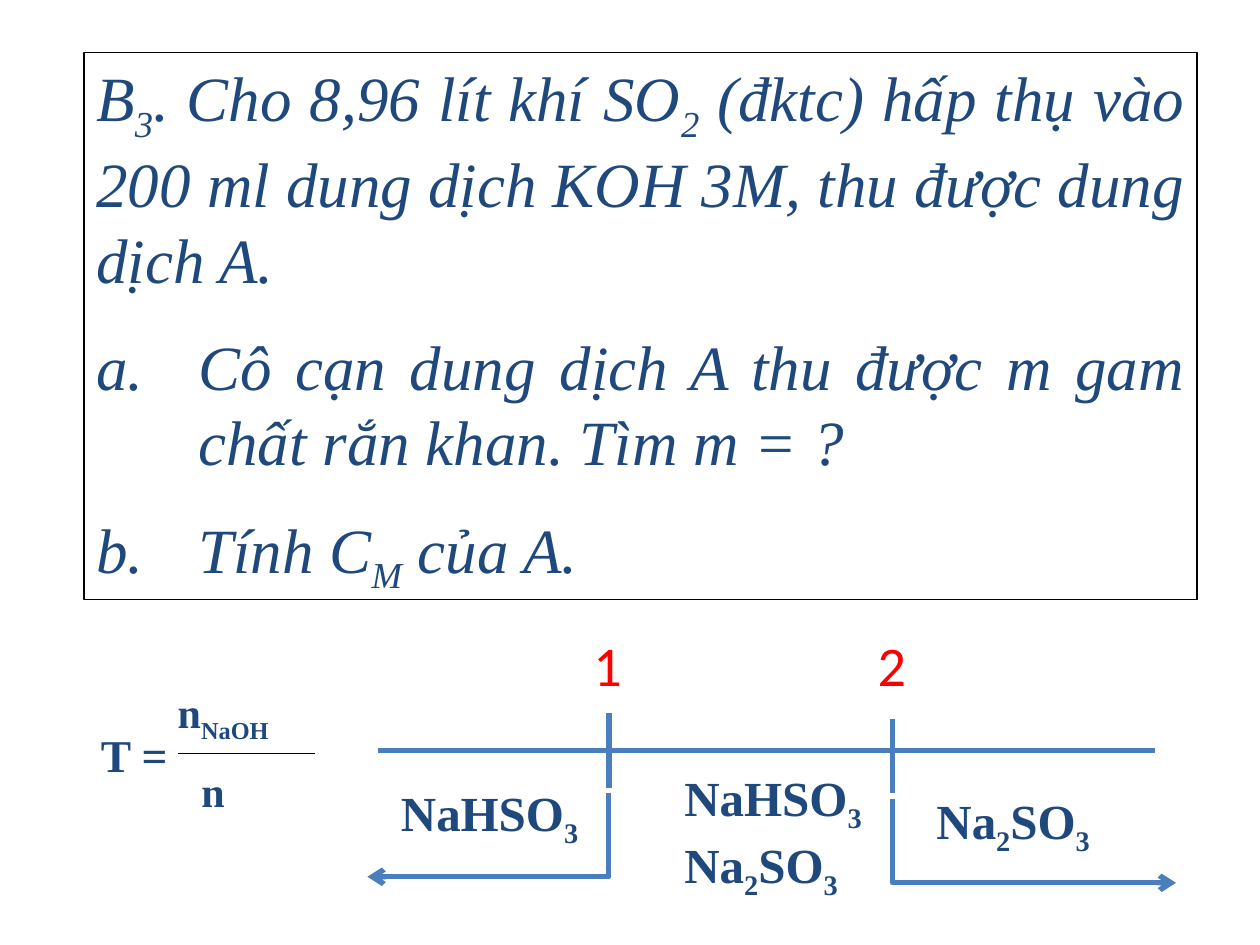
"""Build a chemistry exercise slide with a product scale for the ratio T."""
from dataclasses import dataclass

from lxml.etree import SubElement
from pptx import Presentation
from pptx.dml.color import RGBColor as Rgb
from pptx.enum.shapes import MSO_CONNECTOR as Link, MSO_SHAPE as Form
from pptx.enum.text import MSO_ANCHOR as Anchor, MSO_AUTO_SIZE as Fit, PP_ALIGN as Align
from pptx.oxml.ns import qn
from pptx.util import Pt

HUES = {"ink": "1F497D", "mark": "FF0000", "axis": "4B7EBC", "edge": "000000"}
SERIF = "Times New Roman"
HANG = 58.3
AXIS_Y = 429


@dataclass
class Label:
    """A text box whose subscripts stand between underscores."""
    x: float
    y: float
    w: float
    h: float
    lines: list[str]
    size: float = 28
    font: str = SERIF
    hue: str = "ink"
    bold: bool = True
    slant: bool = False
    wrap: bool = True
    gap: float = 0
    pads: tuple[float, ...] = ()


@dataclass
class Stroke:
    """A straight or bent line."""
    x1: float
    y1: float
    x2: float
    y2: float
    hue: str = "axis"
    width: float = 3
    bent: bool = False


def write(frame, item: Label) -> None:
    """Fill a text frame and format its runs."""
    frame.word_wrap = item.wrap
    frame.text = "\n".join(item.lines)
    for para in frame.paragraphs:
        parts = para.text.split("_")
        para.text = parts[0]
        for part in parts[1:]:
            para.add_run().text = part
        para.space_before = Pt(item.gap)
        for i, run in enumerate(para.runs):
            font = run.font
            font.name, font.size = item.font, Pt(item.size)
            font.bold, font.italic = item.bold, item.slant
            font.color.rgb = Rgb.from_string(HUES[item.hue])
            if i % 2:
                font._element.set("baseline", "-25000")
    for para, pad in zip(frame.paragraphs, item.pads):
        para._p.get_or_add_pPr().set("marL", str(Pt(pad)))


def draw_label(shapes, item: Label) -> None:
    """Add a text box."""
    box = shapes.add_textbox(Pt(item.x), Pt(item.y), Pt(item.w), Pt(item.h))
    write(box.text_frame, item)
    box.text_frame.auto_size = Fit.SHAPE_TO_FIT_TEXT


def draw_task(shapes, item: Label) -> None:
    """Add the framed exercise with lettered questions."""
    box = shapes.add_shape(
        Form.RECTANGLE, Pt(item.x), Pt(item.y), Pt(item.w), Pt(item.h))
    box.shadow.inherit = False
    box.fill.background()
    box.line.color.rgb = Rgb.from_string(HUES["edge"])
    box.line.width = Pt(0.75)
    frame = box.text_frame
    write(frame, item)
    frame.vertical_anchor = Anchor.TOP
    frame.auto_size = Fit.SHAPE_TO_FIT_TEXT
    for i, para in enumerate(frame.paragraphs):
        para.alignment = Align.JUSTIFY
        if i:
            props = para._p.get_or_add_pPr()
            props.set("marL", str(Pt(HANG)))
            props.set("indent", str(-Pt(HANG)))
            SubElement(props, qn("a:buFont"), typeface="+mj-lt")
            SubElement(props, qn("a:buAutoNum"), type="alphaLcPeriod")


def draw_stroke(shapes, item: Stroke) -> None:
    """Add a line, or a bent arrow that drops first and then turns."""
    kind = Link.ELBOW if item.bent else Link.STRAIGHT
    line = shapes.add_connector(
        kind, Pt(item.x1), Pt(item.y1), Pt(item.x2), Pt(item.y2))
    line.line.color.rgb = Rgb.from_string(HUES[item.hue])
    line.line.width = Pt(item.width)
    props = line._element.spPr
    if item.bent:
        guides = props.find(qn("a:prstGeom")).get_or_add_avLst()
        SubElement(guides, qn("a:gd"), name="adj1", fmla="val 0")
        SubElement(line.line._get_or_add_ln(), qn("a:tailEnd"), type="arrow")
    SubElement(props, qn("a:effectLst"))


TASK = Label(48, 30, 636, 312.5, [
    "B_3_. Cho 8,96 lít khí SO_2_ (đktc) hấp thụ vào 200 ml dung dịch KOH 3M, "
    "thu được dung dịch A.",
    "Cô cạn dung dịch A thu được m gam chất rắn khan. Tìm m = ?",
    "Tính C_M_ của A.",
], size=36, bold=False, slant=True, gap=18)

STROKES = [
    Stroke(216, AXIS_Y, 660, AXIS_Y),
    Stroke(348, 407.5, 348, 450),
    Stroke(510, 411, 510, 453),
    Stroke(348, 453, 210, 501, bent=True),
    Stroke(510, 456.5, 672, 504.5, bent=True),
    Stroke(102, 430.5, 180, 430.5, hue="edge", width=0.75),
]

LABELS = [
    Label(x, 357, 31, 46, [text], size=32, font="Calibri", hue="mark",
          bold=False, wrap=False)
    for x, text in ((332, "1"), (494.5, "2"))
] + [
    Label(90, 389, 114, 80, ["n_NaOH", "n"], size=24, gap=12, pads=(4.5, 18)),
    Label(50.5, 412, 54, 38.5, ["T ="], size=26, gap=13),
    Label(222, 443.5, 120, 41, ["NaHSO_3"], gap=14),
    Label(528, 448, 115, 41, ["Na_2_SO_3"], gap=14),
    Label(384, 435, 210, 75, ["NaHSO_3", "Na_2_SO_3"]),
]


def main() -> None:
    """Draw the slide and save it."""
    deck = Presentation()
    deck.slide_width, deck.slide_height = Pt(720), Pt(540)
    shapes = deck.slides.add_slide(deck.slide_layouts[6]).shapes
    draw_task(shapes, TASK)
    for item in STROKES:
        draw_stroke(shapes, item)
    for item in LABELS:
        draw_label(shapes, item)
    deck.save("out.pptx")


if __name__ == "__main__":
    main()
